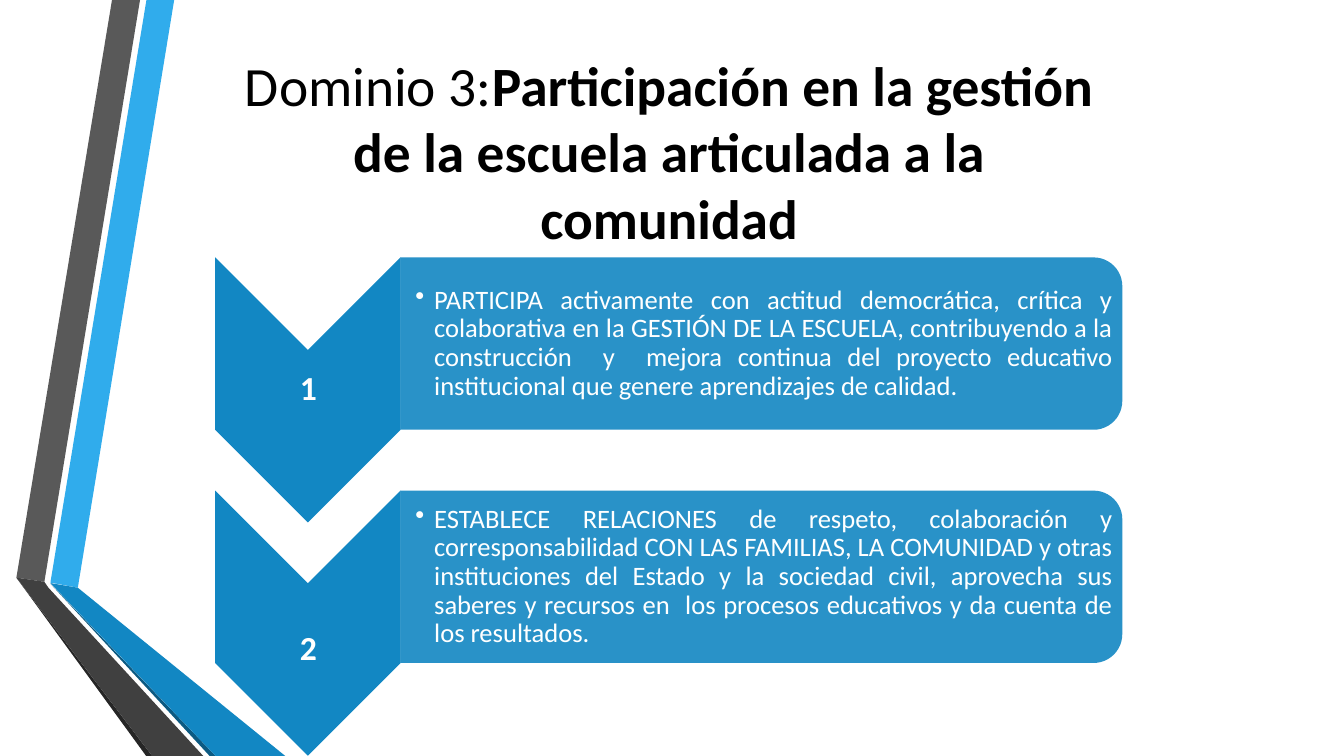
from lxml import etree
from pptx import Presentation
from pptx.dml.color import RGBColor
from pptx.enum import shapes, text
from pptx.oxml.ns import qn
from pptx.util import Pt

BLUE = RGBColor(0x12, 0x87, 0xC3)
SKY = RGBColor(0x30, 0xAC, 0xEC)
NAVY = RGBColor(0x0C, 0x5A, 0x82)
GREY = RGBColor(0x59, 0x59, 0x59)
DARK = RGBColor(0x40, 0x40, 0x40)
COAL = RGBColor(0x26, 0x26, 0x26)
BLACK = RGBColor(0, 0, 0)
WHITE = RGBColor(255, 255, 255)

prs = Presentation()
prs.slide_width, prs.slide_height = Pt(960), Pt(540)
slide = prs.slides.add_slide(prs.slide_layouts[5])


def paint(shape, color):
    shape.shadow.inherit = False
    shape.fill.solid()
    shape.fill.fore_color.rgb = color
    shape.line.fill.background()


def write(par, words, **form):
    run = par.add_run()
    run.text = words
    run.font.name = "Calibri"
    run.font.color.rgb = form.pop("color", WHITE)
    for key, value in form.items():
        setattr(run.font, key, value)


# Folded ribbons on the left edge
ribbons = [
    (SKY, [(36, 416.2), (55.6, 419.8), (124.4, 0), (104.6, 0)]),
    (GREY, [(100, 0), (80, 0), (11.7, 412.6), (31.7, 415.6)]),
    (COAL, [(11.7, 412.6), (104.4, 540), (108.7, 540)]),
    (NAVY, [(36, 416.9), (149.8, 540), (154.1, 540)]),
    (BLUE, [(36, 416.5), (154.1, 540), (203.8, 540), (55.6, 419.8)]),
    (DARK, [(145.2, 540), (34.6, 419.8), (31.7, 415.6), (11.7, 412.6), (108.7, 540)]),
]
for color, points in ribbons:
    points = [(Pt(x), Pt(y)) for x, y in points]
    pen = slide.shapes.build_freeform(*points[0], scale=1.0)
    pen.add_line_segments(points[1:], close=True)
    paint(pen.convert_to_shape(), color)

# Title
title = slide.shapes.title
title.left, title.top, title.width, title.height = Pt(154), Pt(44.6), Pt(648), Pt(126)
frame = title.text_frame
frame.auto_size = text.MSO_AUTO_SIZE.NONE
frame.vertical_anchor = text.MSO_ANCHOR.MIDDLE
head = frame.paragraphs[0]
head.alignment = text.PP_ALIGN.CENTER
write(head, "Dominio 3:", size=Pt(39.6), color=BLACK)
write(head, "Participación en la gestión de la escuela articulada a la comunidad",
      size=Pt(39.6), color=BLACK, bold=True)

# Numbered rows: number, drop of the number, statement
rows = [
    ("1", 0, "PARTICIPA activamente con actitud democrática, crítica y colaborativa "
     "en la GESTIÓN DE LA ESCUELA, contribuyendo a la construcción  y  mejora continua "
     "del proyecto educativo institucional que genere aprendizajes de calidad."),
    ("2", 19, "ESTABLECE RELACIONES de respeto, colaboración y corresponsabilidad CON LAS "
     "FAMILIAS, LA COMUNIDAD y otras instituciones del Estado y la sociedad civil, "
     "aprovecha sus saberes y recursos en  los procesos educativos y da cuenta de los "
     "resultados."),
]
kinds = shapes.MSO_SHAPE
for i, (number, drop, words) in enumerate(rows):
    y = 166.6 * i

    # Chevron and rounded panel, each turned a quarter
    mark = slide.shapes.add_shape(kinds.CHEVRON, Pt(125.2), Pt(212.2 + y), Pt(189.4), Pt(132.6))
    panel = slide.shapes.add_shape(kinds.ROUND_2_SAME_RECTANGLE,
                                   Pt(482.3), Pt(-12.4 + y), Pt(123.1), Pt(515.6))
    for shape in (mark, panel):
        shape.rotation = 90
        paint(shape, BLUE)
    tint = panel.fill._xPr.find(".//" + qn("a:srgbClr"))
    etree.SubElement(tint, qn("a:alpha")).set("val", "90000")

    # Texts over the two shapes
    label = slide.shapes.add_textbox(Pt(154), Pt(249.8 + y + drop), Pt(132.5), Pt(57))
    body = slide.shapes.add_textbox(Pt(286), Pt(190 + y), Pt(509.6), Pt(111))
    for box, left, pad, align in ((label, 1.2, 1.2, text.PP_ALIGN.CENTER),
                                  (body, 10.7, 0.9, text.PP_ALIGN.JUSTIFY)):
        form = dict(word_wrap=True, vertical_anchor=text.MSO_ANCHOR.MIDDLE,
                    margin_left=Pt(left), margin_right=Pt(pad),
                    margin_top=Pt(pad), margin_bottom=Pt(pad))
        for key, value in form.items():
            setattr(box.text_frame, key, value)
        par = box.text_frame.paragraphs[0]
        par.alignment, par.line_spacing = align, 0.9
    write(label.text_frame.paragraphs[0], number, size=Pt(24), bold=True)
    par = body.text_frame.paragraphs[0]
    write(par, words, size=Pt(19))

    # Bullet with hanging indent
    props = par._p.get_or_add_pPr()
    props.set("marL", str(Pt(13.5)))
    props.set("indent", str(Pt(-13.5)))
    etree.SubElement(props, qn("a:buChar")).set("char", "•")

prs.save("out.pptx")
